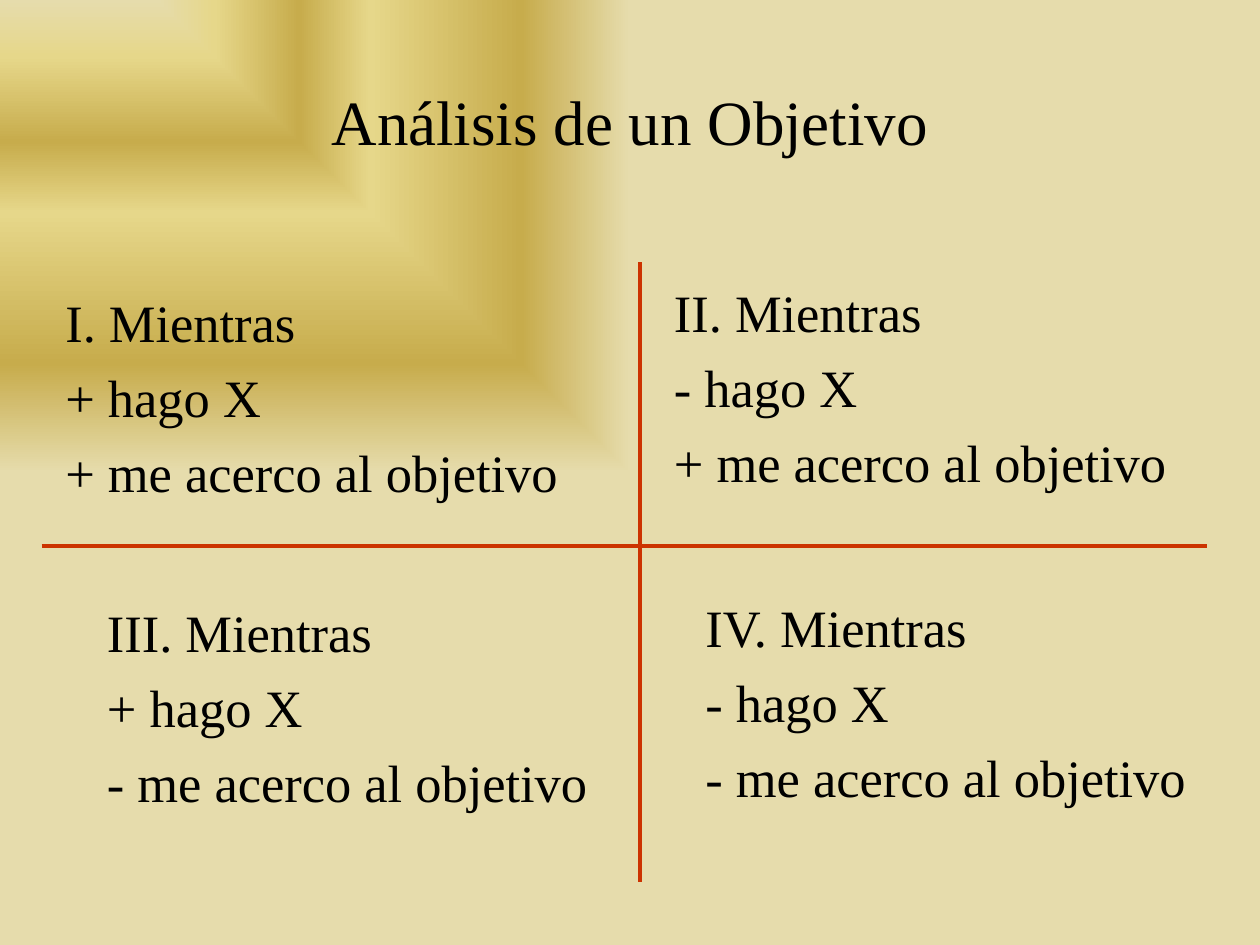
"""Build a slide that analyses an objective in four quadrants."""
import lxml.etree
import pptx
import pptx.dml.color
import pptx.enum.shapes
import pptx.enum.text
import pptx.oxml.ns
import pptx.util

Inches = pptx.util.Inches
Pt = pptx.util.Pt
qn = pptx.oxml.ns.qn

COLORS = {
    "text": "000000",
    "axis": "CC3300",
    "sand": "E6DCAC",
    "straw": "E6D78A",
    "gold": "C7AC4C",
}
BACKGROUND_STOPS = [(0, "sand"), (12, "straw"), (30, "gold"),
                    (45, "straw"), (77, "gold"), (100, "sand")]
QUADRANTS = [
    ("I", "+", "+", (0.42, 2.25, 4.17, 2.04)),
    ("II", "-", "+", (5.25, 2.17, 4.5, 2.04)),
    ("III", "+", "-", (0.75, 4.71, 4.17, 2.04)),
    ("IV", "-", "-", (5.5, 4.67, 4.17, 2.04)),
]
AXES = [(5.08, 2.08, 5.08, 7), (0.33, 4.33, 9.58, 4.33)]


def rgb(name):
    return pptx.dml.color.RGBColor.from_string(COLORS[name])


def paint_background(slide):
    slide.background.fill.gradient()
    gradient = slide.element.find(".//" + qn("a:gradFill"))
    for child in list(gradient):
        gradient.remove(child)
    stops = lxml.etree.SubElement(gradient, qn("a:gsLst"))
    for percent, name in BACKGROUND_STOPS:
        stop = lxml.etree.SubElement(stops, qn("a:gs"), pos=str(percent * 1000))
        lxml.etree.SubElement(stop, qn("a:srgbClr"), val=COLORS[name])
    spread = lxml.etree.SubElement(gradient, qn("a:path"), path="rect")
    lxml.etree.SubElement(spread, qn("a:fillToRect"), r="100000", b="100000")


def add_text(slide, text, box, size=30, align="LEFT", anchor="TOP", before=0, hanging=0):
    frame = slide.shapes.add_textbox(*map(Inches, box)).text_frame
    frame.word_wrap = True
    frame.vertical_anchor = pptx.enum.text.MSO_ANCHOR[anchor]
    frame.text = text
    for paragraph in frame.paragraphs:
        paragraph.alignment = pptx.enum.text.PP_ALIGN[align]
        paragraph.space_before = Pt(before)
        if hanging:
            properties = paragraph._p.get_or_add_pPr()
            properties.set("marL", str(Inches(hanging)))
            properties.set("indent", str(-Inches(hanging)))
        for run in paragraph.runs:
            run.font.name = "Times New Roman"
            run.font.size = Pt(size)
            run.font.color.rgb = rgb("text")


def add_axis(slide, ends):
    axis = slide.shapes.add_connector(
        pptx.enum.shapes.MSO_CONNECTOR.STRAIGHT, *map(Inches, ends))
    axis.line.color.rgb = rgb("axis")
    axis.line.width = Pt(2.25)
    lxml.etree.SubElement(axis._element.spPr, qn("a:effectLst"))


def main():
    deck = pptx.Presentation()
    deck.slide_width, deck.slide_height = Inches(10), Inches(7.5)
    slide = deck.slides.add_slide(deck.slide_layouts[6])
    paint_background(slide)
    add_text(slide, "Análisis de un Objetivo", (0.75, 0.33, 8.5, 1.25),
             size=36, align="CENTER", anchor="MIDDLE")
    for numeral, action, progress, box in QUADRANTS:
        statement = f"{numeral}. Mientras\n{action} hago X\n{progress} me acerco al objetivo"
        add_text(slide, statement, box, before=7, hanging=0.38)
    for ends in AXES:
        add_axis(slide, ends)
    deck.save("out.pptx")


if __name__ == "__main__":
    main()
